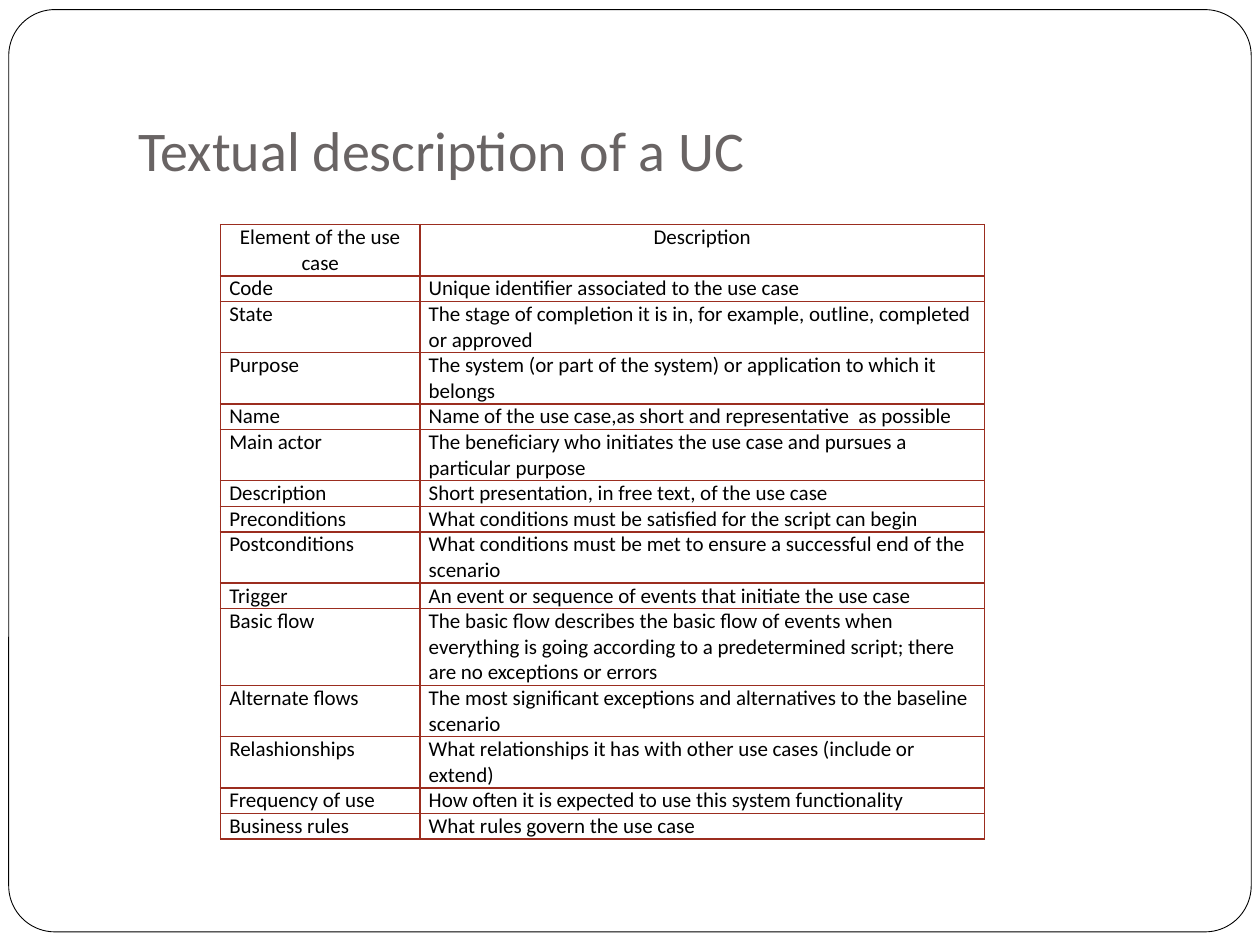
from lxml import etree
from pptx import Presentation
from pptx.dml.color import RGBColor
from pptx.enum.shapes import MSO_SHAPE
from pptx.enum.text import MSO_ANCHOR, PP_ALIGN
from pptx.oxml.ns import qn
from pptx.util import Pt

ROUNDED = MSO_SHAPE.ROUNDED_RECTANGLE
BOTTOM, TOP = MSO_ANCHOR.BOTTOM, MSO_ANCHOR.TOP
LEFT, CENTER = PP_ALIGN.LEFT, PP_ALIGN.CENTER

COLORS = {"paper": "FFFFFF", "frame": "000000", "title": "696464",
          "text": "000000", "border": "9B2D1F"}
FONT = "Calibri"
LINE_HEIGHT = 14.64

# (element, description, lines of text in the row)
ROWS = [
    ("Element of the use case", "Description", 2),
    ("Code", "Unique identifier associated to the use case", 1),
    ("State", "The stage of completion it is in, for example, outline, "
     "completed or approved", 2),
    ("Purpose", "The system (or part of the system) or application to which "
     "it belongs", 2),
    ("Name", "Name of the use case,as short and representative  as possible", 1),
    ("Main actor", "The beneficiary who initiates the use case and pursues a "
     "particular purpose", 2),
    ("Description", "Short presentation, in free text, of the use case", 1),
    ("Preconditions", "What conditions must be satisfied for the script can begin", 1),
    ("Postconditions", "What conditions must be met to ensure a successful end "
     "of the scenario", 2),
    ("Trigger", "An event or sequence of events that initiate the use case", 1),
    ("Basic flow", "The basic flow describes the basic flow of events when "
     "everything is going according to a predetermined script; there are no "
     "exceptions or errors", 3),
    ("Alternate flows", "The most significant exceptions and alternatives to "
     "the baseline scenario", 2),
    ("Relashionships", "What relationships it has with other use cases "
     "(include or extend)", 2),
    ("Frequency of use", "How often it is expected to use this system functionality", 1),
    ("Business rules", "What rules govern the use case", 1),
]


def rgb(name):
    return RGBColor.from_string(COLORS[name])


def write(tf, text, size=12, color="text", align=LEFT):
    tf.word_wrap = True
    p = tf.paragraphs[0]
    p.alignment = align
    r = p.add_run()
    r.text = text
    r.font.name = FONT
    r.font.size = Pt(size)
    r.font.color.rgb = rgb(color)


def set_margins(box, left, top, right, bottom):
    box.margin_left, box.margin_top = Pt(left), Pt(top)
    box.margin_right, box.margin_bottom = Pt(right), Pt(bottom)


def border_cell(cell, color, width):
    """Draw all four cell borders; they must precede the fill in tcPr."""
    tc_pr = cell._tc.get_or_add_tcPr()
    for i, side in enumerate(("a:lnL", "a:lnR", "a:lnT", "a:lnB")):
        ln = etree.Element(qn(side), w=str(Pt(width)))
        fill = etree.SubElement(ln, qn("a:solidFill"))
        etree.SubElement(fill, qn("a:srgbClr"), val=COLORS[color])
        tc_pr.insert(i, ln)


class SlideBuilder:
    """Holds the current slide and draws its elements; lengths in points."""

    def __init__(self, s):
        self.s = s

    def frame(self, x, y, w, h, radius):
        sp = self.s.shapes.add_shape(ROUNDED, Pt(x), Pt(y), Pt(w), Pt(h))
        sp.adjustments[0] = radius
        sp.shadow.inherit = False
        sp.fill.solid()
        sp.fill.fore_color.rgb = rgb("paper")
        sp.line.color.rgb = rgb("frame")
        sp.line.width = Pt(0.5)

    def title(self, text, x, y, w, h):
        tf = self.s.shapes.add_textbox(Pt(x), Pt(y), Pt(w), Pt(h)).text_frame
        tf.vertical_anchor = BOTTOM
        set_margins(tf, 7.2, 3.6, 7.2, 7.2)
        write(tf, text, size=32, color="title")

    def table(self, rows, x, y, widths):
        height = LINE_HEIGHT * sum(lines for *_, lines in rows)
        table = self.s.shapes.add_table(len(rows), len(widths), Pt(x), Pt(y),
                                        Pt(sum(widths)), Pt(height)).table
        table.horz_banding = False
        for column, width in zip(table.columns, widths):
            column.width = Pt(width)
        for i, (*texts, lines) in enumerate(rows):
            table.rows[i].height = Pt(LINE_HEIGHT * lines)
            for j, text in enumerate(texts):
                cell = table.cell(i, j)
                cell.fill.background()
                cell.vertical_anchor = TOP
                set_margins(cell, 5.04, 0, 5.04, 0)
                border_cell(cell, "border", 1)
                write(cell.text_frame, text, align=LEFT if i else CENTER)


def main():
    prs = Presentation()
    prs.slide_width, prs.slide_height = Pt(720), Pt(540)
    slide = SlideBuilder(prs.slides.add_slide(prs.slide_layouts[6]))
    slide.frame(5, 5.5, 710, 527, radius=0.05)
    slide.title("Textual description of a UC", 72, 21.6, 612, 90)
    slide.table(ROWS, 126, 128.4, widths=(114, 322.5))
    prs.save("out.pptx")


if __name__ == "__main__":
    main()
